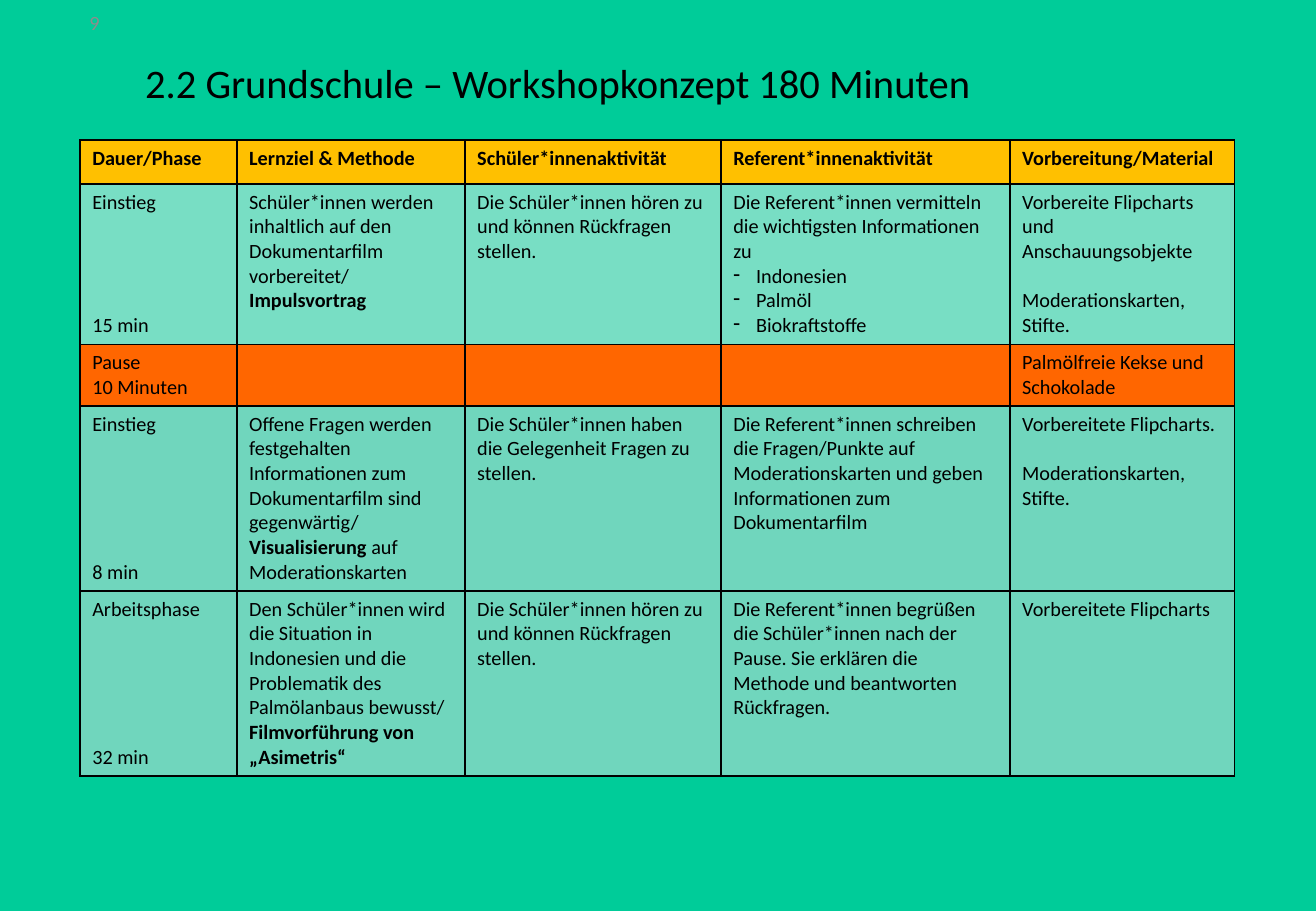
from lxml.etree import SubElement
from pptx import Presentation
from pptx.dml.color import RGBColor
from pptx.enum.text import MSO_ANCHOR, PP_ALIGN
from pptx.oxml.ns import qn
from pptx.util import Pt


def color(text):
    return RGBColor.from_string(text)


def style(para, size, tone="000000"):
    para.font.name = "Calibri"
    para.font.size = Pt(size)
    para.font.color.rgb = color(tone)


deck = Presentation()
deck.slide_width, deck.slide_height = Pt(780), Pt(540)
slide = deck.slides.add_slide(deck.slide_layouts[6])
slide.background.fill.solid()
slide.background.fill.fore_color.rgb = color("00CC99")

line = 14.65
widths = [93, 135.2, 151.8, 171.2, 133.2]
heights = [26, 95, 36, 109.6, 109.6]
fills = ["FFC000", "F0F0F0", "FF6600", "E1E1E1", "E1E1E1"]

# A number in a cell is a gap in lines; ** switches bold; "- " starts a bullet
rows = [
    [["**Dauer/Phase"], ["**Lernziel & Methode"], ["**Schüler*innenaktivität"],
     ["**Referent*innenaktivität"], ["**Vorbereitung/Material"]],
    [["Einstieg", 4, "15 min"],
     ["Schüler*innen werden inhaltlich auf den Dokumentarfilm vorbereitet/ **Impulsvortrag"],
     ["Die Schüler*innen hören zu und können Rückfragen stellen."],
     ["Die Referent*innen vermitteln die wichtigsten Informationen zu",
      "- Indonesien", "- Palmöl", "- Biokraftstoffe"],
     ["Vorbereite Flipcharts und Anschauungsobjekte", 1, "Moderationskarten, Stifte."]],
    [["Pause", "10 Minuten"], [], [], [], ["Palmölfreie Kekse und Schokolade"]],
    [["Einstieg", 5, "8 min"],
     ["Offene Fragen werden festgehalten Informationen zum Dokumentarfilm sind gegenwärtig/ "
      "**Visualisierung** auf Moderationskarten"],
     ["Die Schüler*innen haben die Gelegenheit Fragen zu stellen."],
     ["Die Referent*innen schreiben die Fragen/Punkte auf Moderationskarten und geben "
      "Informationen zum Dokumentarfilm"],
     ["Vorbereitete Flipcharts.", 1, "Moderationskarten, Stifte."]],
    [["Arbeitsphase", 5, "32 min"],
     ["Den Schüler*innen wird die Situation in Indonesien und die Problematik des "
      "Palmölanbaus bewusst/", "**Filmvorführung von „Asimetris“"],
     ["Die Schüler*innen hören zu und können Rückfragen stellen."],
     ["Die Referent*innen begrüßen die Schüler*innen nach der Pause. Sie erklären die "
      "Methode und beantworten Rückfragen."],
     ["Vorbereitete Flipcharts"]],
]

table = slide.shapes.add_table(5, 5, Pt(47.5), Pt(83), Pt(sum(widths)), Pt(sum(heights))).table
table.first_row = table.horz_banding = False
for col, width in zip(table.columns, widths):
    col.width = Pt(width)
for row, height, fill, texts in zip(table.rows, heights, fills, rows):
    row.height = Pt(height)
    for cell, parts in zip(row.cells, texts):
        props = cell._tc.get_or_add_tcPr()
        for side in ["lnL", "lnR", "lnT", "lnB"]:
            edge = SubElement(props, qn("a:" + side), w=str(Pt(1)))
            SubElement(SubElement(edge, qn("a:solidFill")), qn("a:srgbClr"), val="000000")
        cell.fill.solid()
        cell.fill.fore_color.rgb = color(fill)
        if fill in ["F0F0F0", "E1E1E1"]:
            SubElement(props.find(qn("a:solidFill"))[0], qn("a:alpha"), val="50000")
        para = cell.text_frame.paragraphs[0]
        style(para, 12)
        gap = 0
        for i, part in enumerate(parts):
            if isinstance(part, int):
                gap = part * line
                continue
            if i:
                para = cell.text_frame.add_paragraph()
            if gap:
                para.space_before = Pt(gap)
            if part.startswith("- "):
                part = part[2:]
                indent = para._p.get_or_add_pPr()
                indent.set("marL", str(Pt(13.5)))
                indent.set("indent", str(Pt(-13.5)))
                SubElement(indent, qn("a:buChar"), char="-")
            style(para, 12)
            for j, piece in enumerate(part.split("**")):
                if piece:
                    run = para.add_run()
                    run.text = piece
                    run.font.bold = j % 2 == 1

labels = [
    ("9", -32, -1, 176, 29, 12, "8C8C8C", PP_ALIGN.CENTER, 1),
    ("2.2 Grundschule – Workshopkonzept 180 Minuten", 79, 26, 621, 49, 24, "000000",
     PP_ALIGN.LEFT, 0.9),
]
for text, left, top, width, height, size, tone, align, space in labels:
    frame = slide.shapes.add_textbox(Pt(left), Pt(top), Pt(width), Pt(height)).text_frame
    frame.word_wrap = True
    frame.vertical_anchor = MSO_ANCHOR.MIDDLE
    para = frame.paragraphs[0]
    para.text = text
    para.alignment = align
    para.line_spacing = space
    style(para, size, tone)

deck.save("out.pptx")
